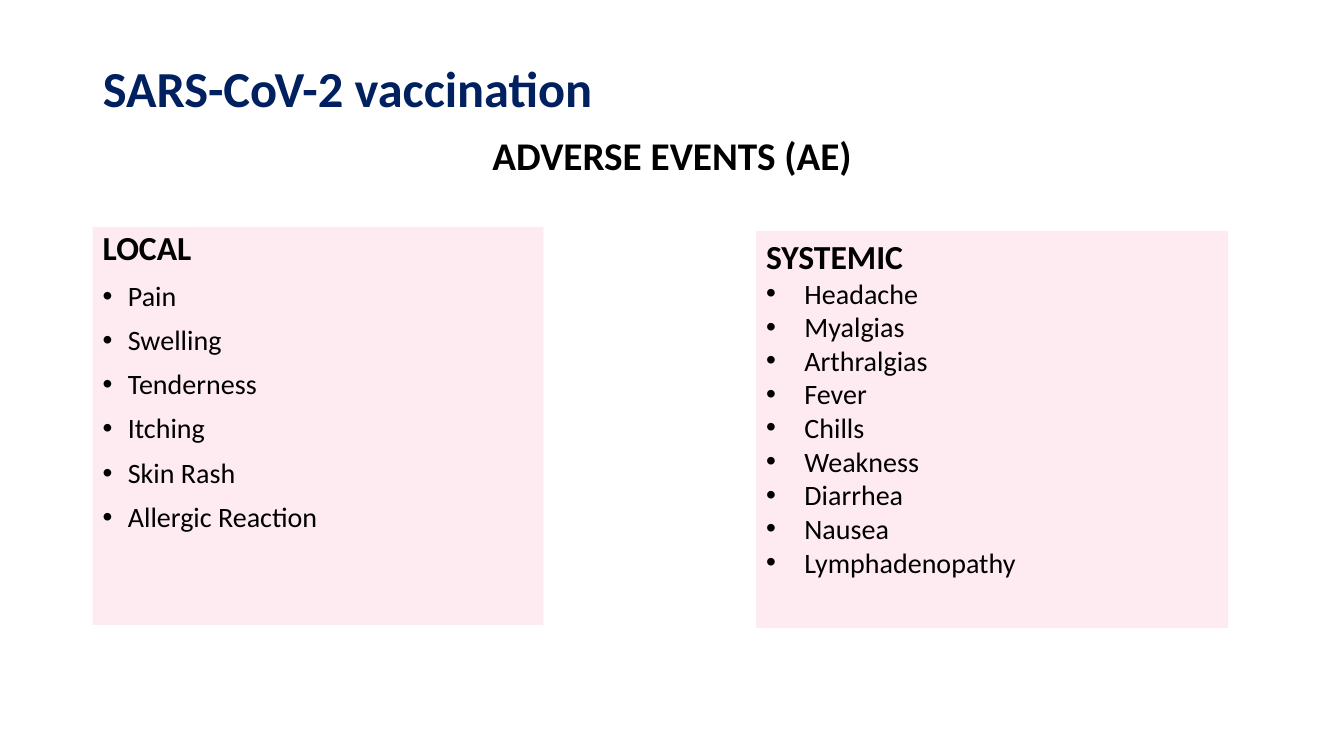
from dataclasses import dataclass

from lxml import etree
from pptx import Presentation
from pptx import util as u
from pptx.dml.color import RGBColor
from pptx.enum import text
from pptx.oxml import ns
from pptx.slide import Slide


@dataclass(frozen=True)
class Theme:
    font: str = "Calibri"
    navy: str = "002060"
    black: str = "000000"
    panel: str = "FEEAF1"
    title_size: int = 36
    subtitle_size: int = 28
    heading_size: int = 24
    item_size: int = 20


@dataclass(frozen=True)
class Box:
    left: float
    top: float
    width: float
    height: float


@dataclass(frozen=True)
class EventGroup:
    heading: str
    events: tuple[str, ...]
    box: Box
    indent: float
    line_spacing: float = 1.0
    space_before: int = 0


THEME = Theme()

GROUPS = (
    EventGroup(
        "LOCAL",
        ("Pain", "Swelling", "Tenderness", "Itching", "Skin Rash", "Allergic Reaction"),
        Box(0.92, 2.25, 4.47, 3.95),
        indent=0.25,
        line_spacing=0.9,
        space_before=10,
    ),
    EventGroup(
        "SYSTEMIC",
        ("Headache", "Myalgias", "Arthralgias", "Fever", "Chills", "Weakness",
         "Diarrhea", "Nausea", "Lymphadenopathy"),
        Box(7.5, 2.29, 4.68, 3.94),
        indent=0.38,
    ),
)


def place(part, box: Box) -> None:
    part.left, part.top = u.Inches(box.left), u.Inches(box.top)
    part.width, part.height = u.Inches(box.width), u.Inches(box.height)
    part.text_frame.word_wrap = True
    part.text_frame.auto_size = text.MSO_AUTO_SIZE.NONE


def style(paragraph, size: int, color: str, bold: bool) -> None:
    for run in paragraph.runs:
        run.font.name = THEME.font
        run.font.size = u.Pt(size)
        run.font.bold = bold
        run.font.color.rgb = RGBColor.from_string(color)


def add_bullet(paragraph, indent: float) -> None:
    properties = paragraph._p.get_or_add_pPr()
    properties.set("marL", str(u.Inches(indent)))
    properties.set("indent", str(-u.Inches(indent)))
    etree.SubElement(properties, ns.qn("a:buFont")).set("typeface", "Arial")
    etree.SubElement(properties, ns.qn("a:buChar")).set("char", "•")


def draw_title(slide: Slide, wording: str) -> None:
    title = slide.shapes.title
    place(title, Box(0.92, 0.4, 11.62, 1))
    title.text_frame.text = wording
    title.text_frame.vertical_anchor = text.MSO_ANCHOR.MIDDLE
    line = title.text_frame.paragraphs[0]
    line.alignment = text.PP_ALIGN.LEFT
    line.line_spacing = 0.9
    style(line, THEME.title_size, THEME.navy, True)


def draw_subtitle(slide: Slide, wording: str) -> None:
    subtitle = slide.shapes.add_textbox(0, 0, 0, 0)
    place(subtitle, Box(3.89, 1.25, 5.55, 0.57))
    subtitle.text_frame.text = wording
    line = subtitle.text_frame.paragraphs[0]
    line.alignment = text.PP_ALIGN.CENTER
    style(line, THEME.subtitle_size, THEME.black, True)


def draw_group(slide: Slide, group: EventGroup) -> None:
    panel = slide.shapes.add_textbox(0, 0, 0, 0)
    place(panel, group.box)
    panel.fill.solid()
    panel.fill.fore_color.rgb = RGBColor.from_string(THEME.panel)
    panel.text_frame.text = "\n".join((group.heading, *group.events))
    heading, *events = panel.text_frame.paragraphs
    for line in (heading, *events):
        line.line_spacing = group.line_spacing
        line.space_before = u.Pt(group.space_before)
    style(heading, THEME.heading_size, THEME.black, True)
    for event in events:
        add_bullet(event, group.indent)
        style(event, THEME.item_size, THEME.black, False)


def main() -> None:
    deck = Presentation()
    deck.slide_width, deck.slide_height = u.Inches(13.33), u.Inches(7.5)
    slide = deck.slides.add_slide(deck.slide_layouts.get_by_name("Title Only"))
    draw_title(slide, "SARS-CoV-2 vaccination")
    draw_subtitle(slide, "ADVERSE EVENTS (AE)")
    for group in GROUPS:
        draw_group(slide, group)
    deck.save("out.pptx")


if __name__ == "__main__":
    main()
